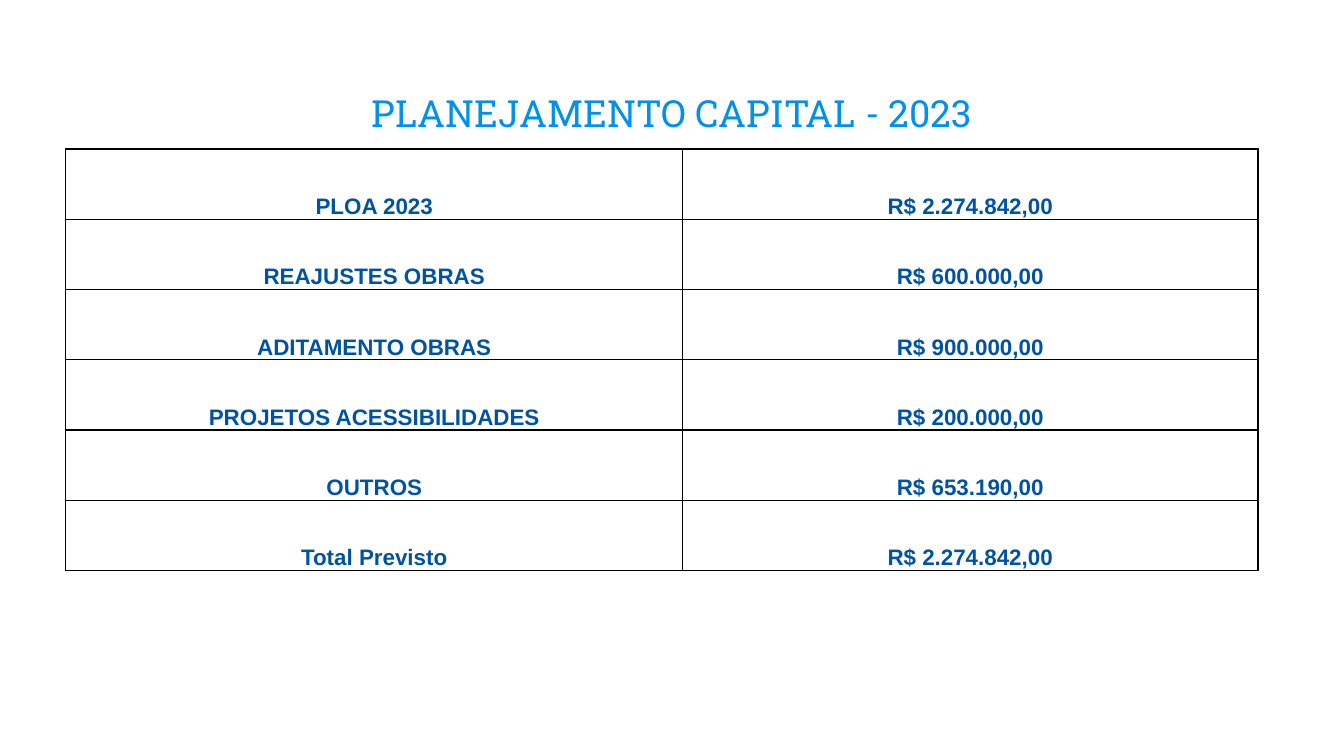
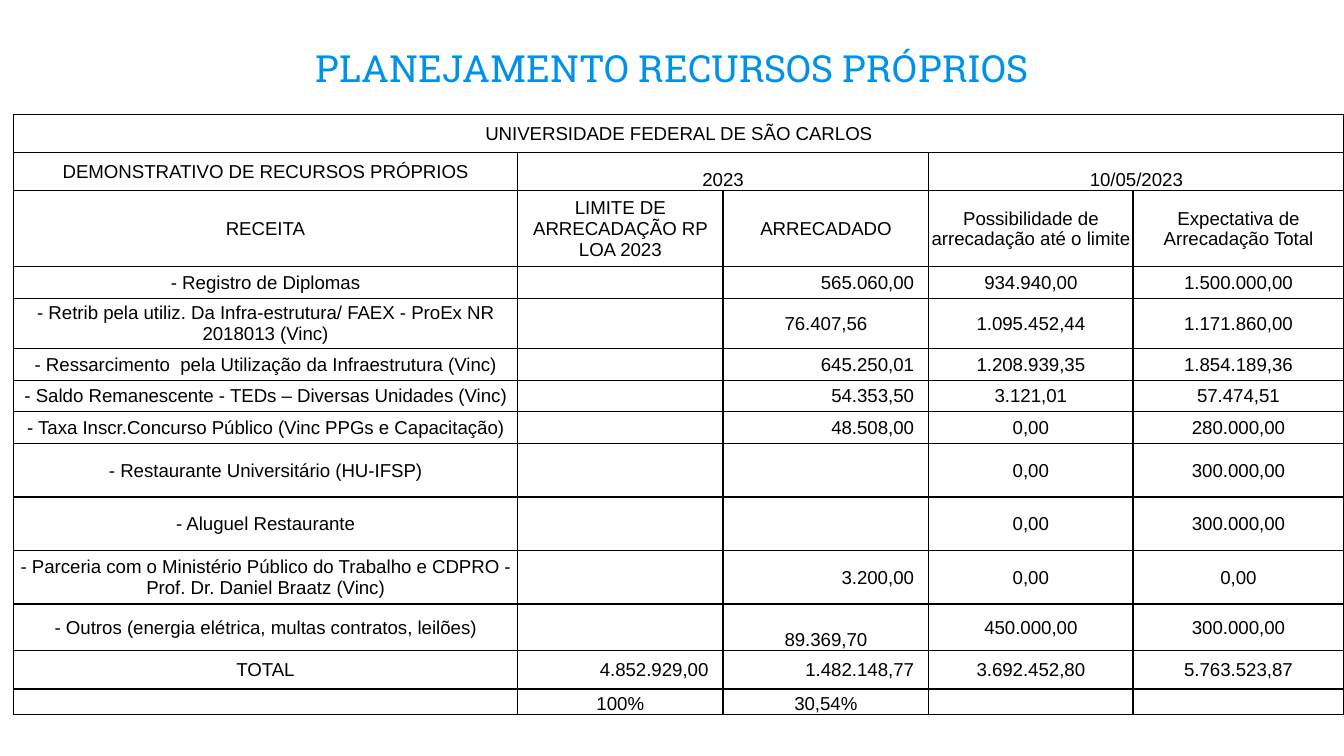
from lxml.etree import SubElement
from pptx import Presentation
from pptx.dml.color import RGBColor
from pptx.enum.text import MSO_ANCHOR, PP_ALIGN
from pptx.oxml.ns import qn
from pptx.util import Inches, Pt

HUES = {"title": "0091EA", "sum": "0053A3", "text": "000000", "rule": "000000"}
FONTS = {"title": "Roboto Slab", "table": "Arial"}

deck = Presentation()
deck.slide_width, deck.slide_height = Inches(10), Inches(5.625)
# One column or row of the grid is a hundredth of the slide
COL, ROW = deck.slide_width / 100, deck.slide_height / 100
PAD = Pt(0.5)


def write(para, text, face, size, hue, bold=False, align=PP_ALIGN.CENTER):
    para.alignment = align
    if not text:
        # An empty cell keeps the table's text size so its row stays low
        SubElement(para._p, qn("a:endParaRPr"), sz=str(size * 100))
        return
    run = para.add_run()
    run.text = text
    run.font.name = FONTS[face]
    run.font.size = Pt(size)
    run.font.bold = bold
    run.font.color.rgb = RGBColor.from_string(HUES[hue])


def style(cell):
    cell.margin_left = cell.margin_right = cell.margin_top = PAD
    cell.margin_bottom = 0
    props = cell._tc.get_or_add_tcPr()
    for side in ("lnL", "lnR", "lnT", "lnB"):
        line = SubElement(props, qn("a:" + side), w=str(Pt(0.75)))
        fill = SubElement(line, qn("a:solidFill"))
        SubElement(fill, qn("a:srgbClr"), val=HUES["rule"])
    cell.fill.background()


# Content of the two slides
plan = [
    ["PLOA 2023", "R$ 2.274.842,00"],
    ["REAJUSTES OBRAS", "R$ 600.000,00"],
    ["ADITAMENTO OBRAS", "R$ 900.000,00"],
    ["PROJETOS ACESSIBILIDADES", "R$ 200.000,00"],
    ["OUTROS", "R$ 653.190,00"],
    ["Total Previsto", "R$ 2.274.842,00"],
]
funds = [
    ["UNIVERSIDADE FEDERAL DE SÃO CARLOS", "", "", "", ""],
    ["DEMONSTRATIVO DE RECURSOS PRÓPRIOS", "2023", "", "10/05/2023", ""],
    ["RECEITA", "LIMITE DE ARRECADAÇÃO RP LOA 2023", "ARRECADADO",
     "Possibilidade de arrecadação até o limite", "Expectativa de Arrecadação Total"],
    ["- Registro de Diplomas", "", "565.060,00", "934.940,00", "1.500.000,00"],
    ["- Retrib pela utiliz. Da Infra-estrutura/ FAEX - ProEx NR 2018013 (Vinc)",
     "", "76.407,56", "1.095.452,44", "1.171.860,00"],
    ["- Ressarcimento  pela Utilização da Infraestrutura (Vinc)",
     "", "645.250,01", "1.208.939,35", "1.854.189,36"],
    ["- Saldo Remanescente - TEDs – Diversas Unidades (Vinc)",
     "", "54.353,50", "3.121,01", "57.474,51"],
    ["- Taxa Inscr.Concurso Público (Vinc PPGs e Capacitação)",
     "", "48.508,00", "0,00", "280.000,00"],
    ["- Restaurante Universitário (HU-IFSP)", "", "", "0,00", "300.000,00"],
    ["- Aluguel Restaurante", "", "", "0,00", "300.000,00"],
    ["- Parceria com o Ministério Público do Trabalho e CDPRO - Prof. Dr. Daniel Braatz (Vinc)",
     "", "3.200,00", "0,00", "0,00"],
    ["- Outros (energia elétrica, multas contratos, leilões)",
     "", "89.369,70", "450.000,00", "300.000,00"],
    ["TOTAL", "4.852.929,00", "1.482.148,77", "3.692.452,80", "5.763.523,87"],
    ["", "100%", "30,54%", "", ""],
]

# Places in grid units; low cells sit at the bottom, right cells align right
pages = [
    dict(title="PLANEJAMENTO CAPITAL - 2023", box=(8.6, 6, 82.8, 13.7),
         data=plan, left=4.9, top=19.7, cols=[45.9, 42.8], rows=[9.3] * 6,
         size=12, hue="sum", bold=True, spans=[], right=[],
         low=[(r, c) for r in range(6) for c in range(2)]),
    dict(title="PLANEJAMENTO RECURSOS PRÓPRIOS", box=(21.4, 0, 57.2, 13.7),
         data=funds, left=1, top=15.1, cols=[37.5, 15.3, 15.3, 15.2, 15.7],
         rows=[5.05, 5.05, 10.1, 4.2, 6.6] + [4.2] * 3 + [7.07] * 3 + [6.2, 5.05, 3.35],
         size=10, hue="text", bold=False,
         spans=[(0, 0, 4), (1, 1, 2), (1, 3, 4)],
         right=[(r, 2) for r in (3, 5, 6, 7, 10, 12)] + [(12, 1)],
         low=[(1, 1), (1, 3), (11, 2), (13, 1), (13, 2)]),
]

for page in pages:
    slide = deck.slides.add_slide(deck.slide_layouts[6])

    # Title
    x, y, w, h = page["box"]
    box = slide.shapes.add_textbox(int(x * COL), int(y * ROW), int(w * COL), int(h * ROW))
    frame = box.text_frame
    frame.word_wrap = True
    frame.vertical_anchor = MSO_ANCHOR.BOTTOM
    frame.margin_left = frame.margin_right = Inches(0.1)
    frame.margin_top = frame.margin_bottom = Inches(0.1)
    write(frame.paragraphs[0], page["title"], "title", 20, "title")

    # Table frame
    data, cols, rows = page["data"], page["cols"], page["rows"]
    table = slide.shapes.add_table(
        len(rows), len(cols), int(page["left"] * COL), int(page["top"] * ROW),
        int(sum(cols) * COL), int(sum(rows) * ROW)).table
    table.first_row = table.horz_banding = False
    for c, width in enumerate(cols):
        table.columns[c].width = int(width * COL)
    for r, height in enumerate(rows):
        table.rows[r].height = int(height * ROW)
    for r, start, end in page["spans"]:
        table.cell(r, start).merge(table.cell(r, end))

    # Table cells
    for r, line in enumerate(data):
        for c, text in enumerate(line):
            cell = table.cell(r, c)
            style(cell)
            is_low = (r, c) in page["low"]
            cell.vertical_anchor = MSO_ANCHOR.BOTTOM if is_low else MSO_ANCHOR.MIDDLE
            align = PP_ALIGN.CENTER
            if (r, c) in page["right"]:
                align = PP_ALIGN.RIGHT
                cell.margin_right = Inches(0.11)
            write(cell.text_frame.paragraphs[0], text, "table", page["size"],
                  page["hue"], page["bold"], align)

deck.save("out.pptx")
